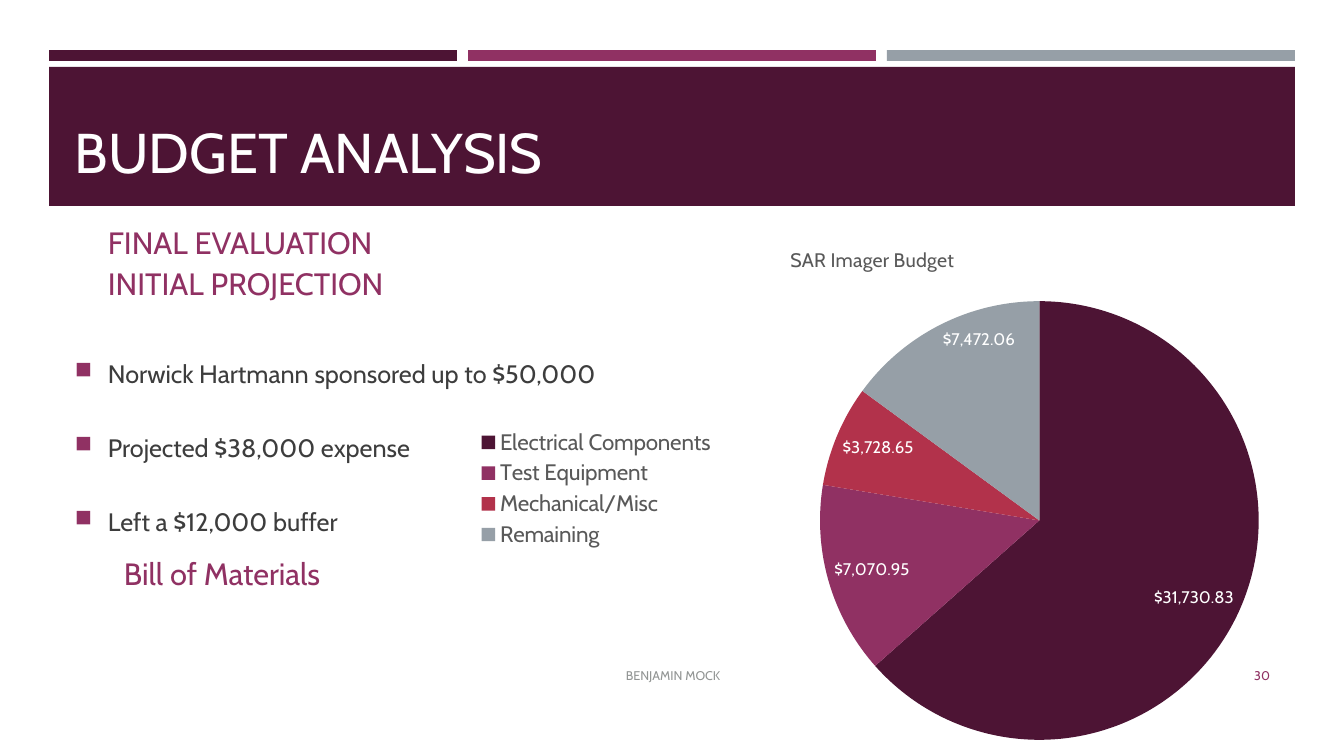
from dataclasses import dataclass

from lxml import etree
from pptx import Presentation
from pptx.chart.data import CategoryChartData
from pptx.dml.color import RGBColor
from pptx.enum.chart import XL_CHART_TYPE, XL_LABEL_POSITION, XL_LEGEND_POSITION
from pptx.enum.shapes import MSO_SHAPE
from pptx.enum.text import MSO_ANCHOR, PP_ALIGN
from pptx.oxml import parse_xml
from pptx.oxml.ns import nsdecls, qn
from pptx.util import Pt

PX = 914400 / 100.8


@dataclass(frozen=True)
class Theme:
    font: str = "Cabin"
    plum: RGBColor = RGBColor(0x4D, 0x14, 0x34)
    magenta: RGBColor = RGBColor(0x90, 0x31, 0x63)
    red: RGBColor = RGBColor(0xB2, 0x32, 0x4B)
    gray: RGBColor = RGBColor(0x96, 0x9F, 0xA7)
    white: RGBColor = RGBColor(0xFF, 0xFF, 0xFF)
    body: RGBColor = RGBColor(0x3D, 0x3D, 0x3D)
    chart_text: RGBColor = RGBColor(0x59, 0x59, 0x59)
    footer: RGBColor = RGBColor(0x92, 0x95, 0x94)
    title_size: int = 40
    heading_size: int = 22
    body_size: int = 18
    legend_size: int = 16
    chart_title_size: int = 14
    label_size: int = 12
    footer_size: int = 9


theme = Theme()


def emu(*lengths):
    return [round(length * PX) for length in lengths]


def style(font, size, color):
    font.name, font.size, font.bold = theme.font, Pt(size), False
    font.color.rgb = color


deck = Presentation()
deck.slide_width, deck.slide_height = emu(1344, 756)
slide = deck.slides.add_slide(deck.slide_layouts[6])

# Three accent bars above the title band
bands = [(49 + 419 * i, 50, 408, 11, color)
         for i, color in enumerate((theme.plum, theme.magenta, theme.gray))]
bands.append((49, 67, 1246, 139, theme.plum))
for *box, color in bands:
    band = slide.shapes.add_shape(MSO_SHAPE.RECTANGLE, *emu(*box))
    band.shadow.inherit = False
    band.fill.solid()
    band.fill.fore_color.rgb = color
    band.line.fill.background()

# Budget pie
budget = CategoryChartData(number_format='"$"#,##0.00')
budget.categories = ["Electrical Components", "Test Equipment", "Mechanical/Misc", "Remaining"]
budget.add_series("Series 1", (31730.83, 7070.95, 3728.65, 7472.06))
pie = slide.shapes.add_chart(XL_CHART_TYPE.PIE, *emu(466, 221, 802, 535), budget).chart
style(pie.font, theme.label_size, theme.chart_text)
pie.has_title = True
chart_title = pie.chart_title.text_frame.paragraphs[0].add_run()
chart_title.text = "SAR Imager Budget"
style(chart_title.font, theme.chart_title_size, theme.chart_text)
pie.has_legend = True
pie.legend.position = XL_LEGEND_POSITION.LEFT
pie.legend.include_in_layout = False
style(pie.legend.font, theme.legend_size, theme.chart_text)

plot = pie.plots[0]
plot.vary_by_categories = True
for i, color in enumerate((theme.plum, theme.magenta, theme.red, theme.gray)):
    wedge = plot.series[0].points[i].format
    wedge.fill.solid()
    wedge.fill.fore_color.rgb = color
    wedge.line.fill.background()
plot.has_data_labels = True
amounts = plot.data_labels
amounts.show_value = True
amounts.show_percentage = False
amounts.number_format, amounts.number_format_is_linked = '"$"#,##0.00', False
amounts.position = XL_LABEL_POSITION.INSIDE_END
style(amounts.font, theme.label_size, theme.white)

# Fixed places of the chart title and the pie, as shares of the chart
chart_xml = pie._chartSpace.chart
title_xml, plot_xml = chart_xml.find(qn("c:title")), chart_xml.find(qn("c:plotArea"))
for parent, index, places in (
    (title_xml, 1, {"xMode": "edge", "yMode": "edge", "x": 0.4, "y": 0.04}),
    (plot_xml, 0, {"layoutTarget": "inner", "xMode": "edge", "yMode": "edge",
                   "x": 0.44, "y": 0.15, "w": 0.55, "h": 0.82}),
):
    for automatic in parent.findall(qn("c:layout")):
        parent.remove(automatic)
    layout = parse_xml(f"<c:layout {nsdecls('c')}><c:manualLayout/></c:layout>")
    for tag, value in places.items():
        etree.SubElement(layout[0], qn(f"c:{tag}")).set("val", str(value))
    parent.insert(index, layout)

# Title, headings and footer
bottom, middle = MSO_ANCHOR.BOTTOM, MSO_ANCHOR.MIDDLE
left, center, right = PP_ALIGN.LEFT, PP_ALIGN.CENTER, PP_ALIGN.RIGHT
for words, box, size, color, anchor, align in (
    ("BUDGET ANALYSIS", (65, 81, 1216, 109), theme.title_size, theme.white, bottom, left),
    ("FINAL EVALUATION", (98, 205, 560, 61), theme.heading_size, theme.magenta, bottom, left),
    ("INITIAL PROJECTION", (98, 248, 560, 59), theme.heading_size, theme.magenta, bottom, left),
    ("Bill of Materials", (114, 536, 560, 61), theme.heading_size, theme.magenta, bottom, left),
    ("BENJAMIN MOCK", (65, 656, 1216, 40), theme.footer_size, theme.footer, middle, center),
    ("30", (1164, 656, 116, 40), theme.footer_size, theme.magenta, middle, right),
):
    frame = slide.shapes.add_textbox(*emu(*box)).text_frame
    frame.word_wrap, frame.vertical_anchor = True, anchor
    line = frame.paragraphs[0]
    line.alignment = align
    if size == theme.heading_size:
        line.space_before, line.space_after = Pt(4.4), Pt(6)
    run = line.add_run()
    run.text = words
    style(run.font, size, color)

# Bulleted projection
projection = slide.shapes.add_textbox(*emu(65, 323, 595, 324)).text_frame
projection.word_wrap = True
indent, = emu(33)
for i, words in enumerate(("Norwick Hartmann sponsored up to $50,000",
                           "Projected $38,000 expense",
                           "Left a $12,000 buffer")):
    point = projection.add_paragraph() if i else projection.paragraphs[0]
    point.line_spacing, point.space_before, point.space_after = 2.0, Pt(3.6), Pt(6)
    run = point.add_run()
    run.text = words
    style(run.font, theme.body_size, theme.body)
    props = point._p.get_or_add_pPr()
    props.set("marL", str(indent))
    props.set("indent", str(-indent))
    for bullet in (f'<a:buClr {nsdecls("a")}><a:srgbClr val="{theme.magenta}"/></a:buClr>',
                   f'<a:buSzPct {nsdecls("a")} val="92000"/>',
                   f'<a:buChar {nsdecls("a")} char="■"/>'):
        props.append(parse_xml(bullet))

deck.save("out.pptx")
